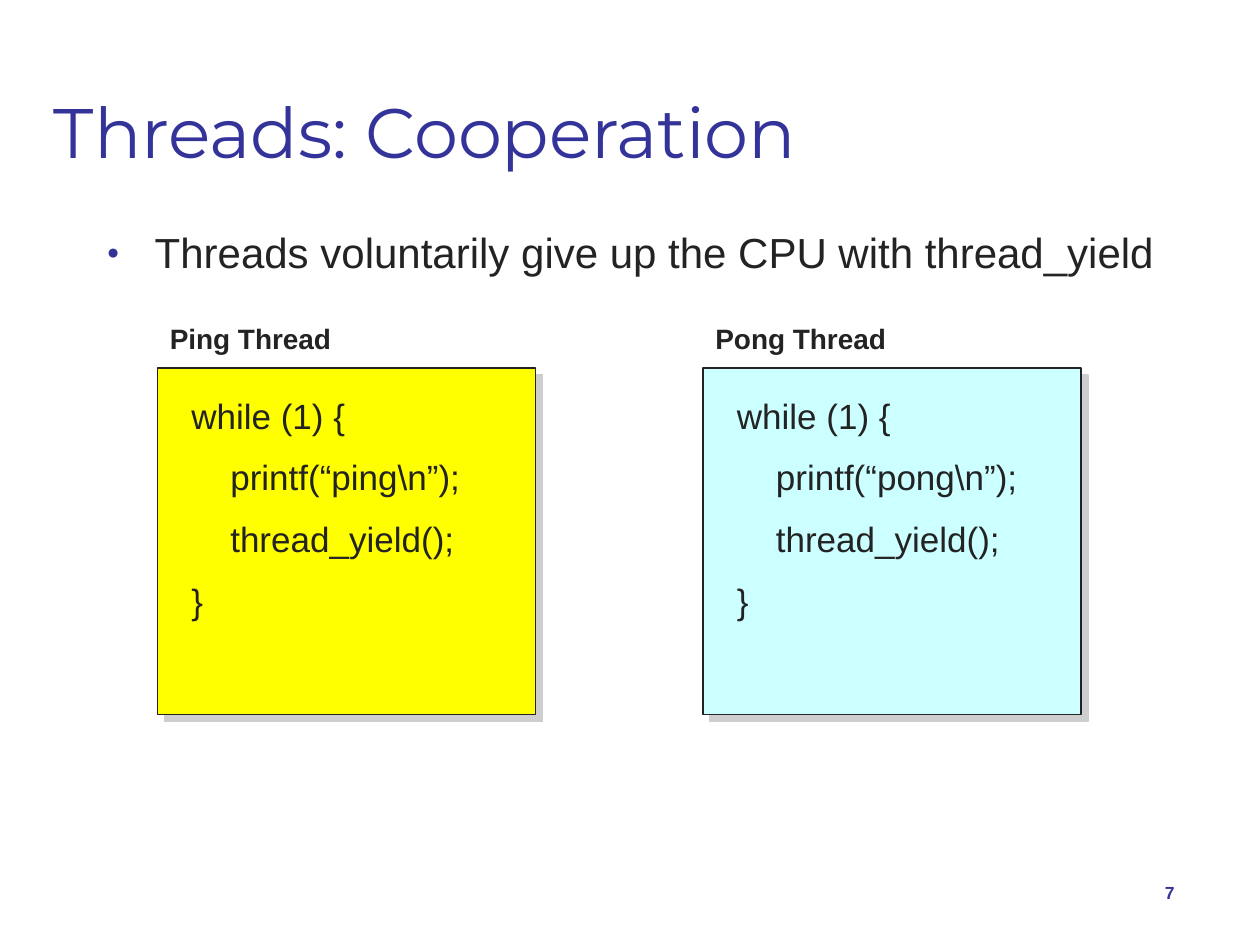
from dataclasses import dataclass

from lxml import etree
from pptx import Presentation
from pptx.dml.color import RGBColor
from pptx.enum.shapes import MSO_SHAPE as Shape
from pptx.enum.text import MSO_ANCHOR as Anchor, PP_ALIGN as Align
from pptx.oxml.ns import qn
from pptx.util import Inches, Pt


@dataclass(frozen=True)
class Theme:
    accent: str = "333399"
    ink: str = "232323"
    shadow: str = "CECECE"
    ping: str = "FFFF00"
    pong: str = "CCFFFF"
    body_font: str = "Arial"
    title_font: str = "Montserrat"
    title_size: int = 40
    bullet_size: int = 24
    code_size: int = 20
    label_size: int = 16
    number_size: int = 10


@dataclass(frozen=True)
class ThreadPanel:
    name: str
    word: str
    left: float
    fill: str

    def code(self) -> list[str]:
        return ["while (1) {", f"\tprintf(“{self.word}\\n”);", "\tthread_yield();", "}"]


T = Theme()
PANELS = [
    ThreadPanel("Ping Thread", "ping", 1.25, T.ping),
    ThreadPanel("Pong Thread", "pong", 5.58, T.pong),
]


def add_text(s, box: tuple, lines: list[str], *, size: int, color: str = T.ink,
             font: str = T.body_font, bold: bool = False, align=Align.LEFT,
             anchor=Anchor.TOP, gap: float = 0):
    """Add a text box; a leading tab marks an indented line."""
    sp = s.shapes.add_textbox(*(Inches(v) for v in box))
    tf = sp.text_frame
    tf.word_wrap = True
    tf.vertical_anchor = anchor
    for i, line in enumerate(lines):
        p = tf.paragraphs[0] if i == 0 else tf.add_paragraph()
        p.alignment = align
        if i:
            p.space_before = Pt(gap)
        if line.startswith("\t"):
            p._p.get_or_add_pPr().set("marL", str(Inches(0.31)))
        r = p.add_run()
        r.text = line.lstrip("\t")
        r.font.size = Pt(size)
        r.font.name = font
        r.font.bold = bold
        r.font.color.rgb = RGBColor.from_string(color)
    return sp


def add_bullet(p, indent: float) -> None:
    """Give a paragraph a small accent bullet with a hanging indent."""
    pPr = p._p.get_or_add_pPr()
    pPr.set("marL", str(Inches(indent)))
    pPr.set("indent", str(-Inches(indent)))
    color = etree.SubElement(pPr, qn("a:buClr"))
    etree.SubElement(color, qn("a:srgbClr"), val=T.accent)
    etree.SubElement(pPr, qn("a:buSzPct"), val="50000")
    etree.SubElement(pPr, qn("a:buFont"), typeface=T.body_font)
    etree.SubElement(pPr, qn("a:buChar"), char="●")


def add_shadow(sp) -> None:
    """Cast a hard shadow down and to the right."""
    sp.shadow.inherit = False
    effects = sp._element.spPr.find(qn("a:effectLst"))
    shadow = etree.SubElement(effects, qn("a:outerShdw"), dist=str(Pt(5.7)),
                              dir=str(45 * 60000), algn="ctr", rotWithShape="0")
    etree.SubElement(shadow, qn("a:srgbClr"), val=T.shadow)


def add_panel(s, panel: ThreadPanel) -> None:
    sp = s.shapes.add_shape(Shape.RECTANGLE, Inches(panel.left), Inches(2.92),
                            Inches(3), Inches(2.75))
    sp.fill.solid()
    sp.fill.fore_color.rgb = RGBColor.from_string(panel.fill)
    sp.line.color.rgb = RGBColor.from_string(T.ink)
    sp.line.width = Pt(0.75)
    add_shadow(sp)
    add_text(s, (panel.left + 0.17, 3.08, 2.67, 1.93), panel.code(),
             size=T.code_size, gap=11.2)
    add_text(s, (panel.left, 2.5, 1.83, 0.37), [panel.name],
             size=T.label_size, bold=True)


def main() -> None:
    prs = Presentation()
    prs.slide_width, prs.slide_height = Inches(10), Inches(7.5)
    s = prs.slides.add_slide(prs.slide_layouts[6])

    # Title and bullet
    add_text(s, (0.33, 0.17, 9.33, 1.25), ["Threads: Cooperation"], size=T.title_size,
             color=T.accent, font=T.title_font, anchor=Anchor.BOTTOM)
    body = add_text(s, (0.75, 1.75, 8.67, 4.83),
                    ["Threads voluntarily give up the CPU with thread_yield"],
                    size=T.bullet_size)
    add_bullet(body.text_frame.paragraphs[0], 0.38)

    # Thread panels
    for panel in PANELS:
        add_panel(s, panel)

    # Slide number
    add_text(s, (8.75, 6.83, 0.67, 0.5), ["7"], size=T.number_size, color=T.accent,
             bold=True, align=Align.RIGHT, anchor=Anchor.MIDDLE)

    prs.save("out.pptx")


if __name__ == "__main__":
    main()
